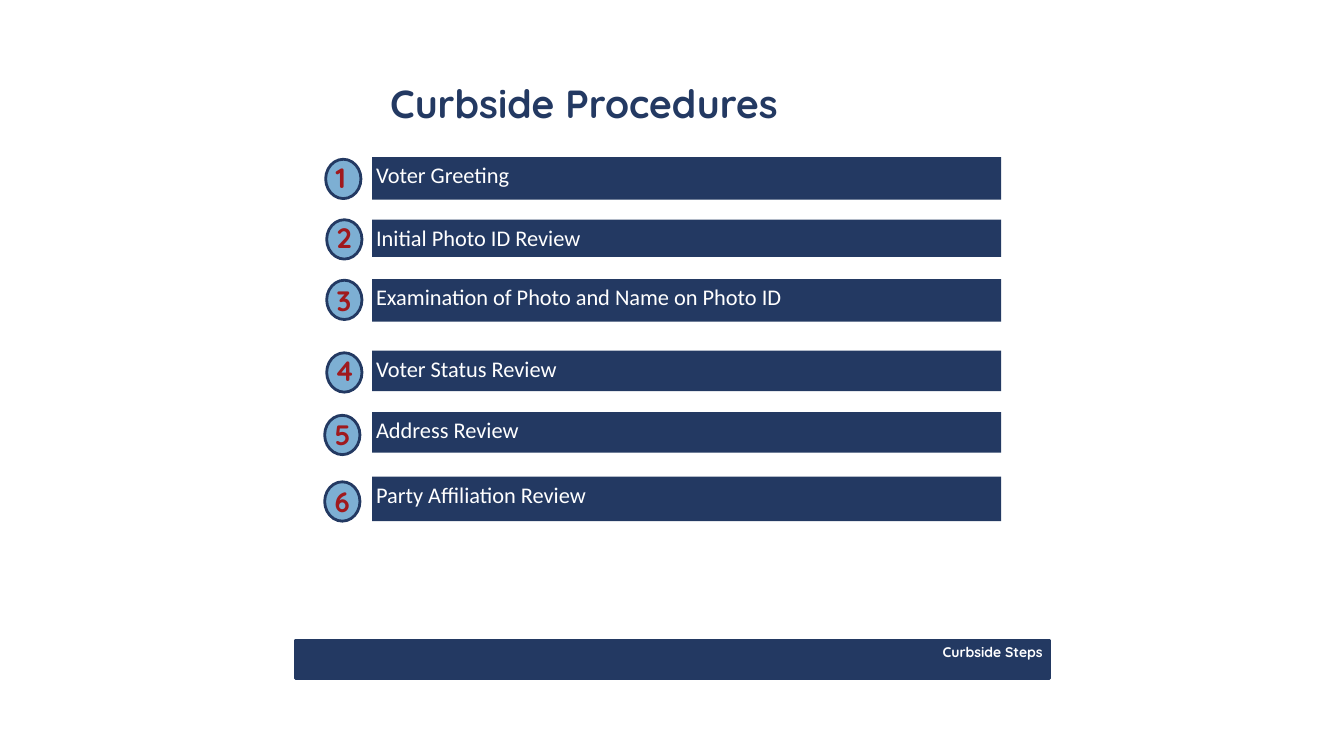
from pptx import Presentation
from pptx.dml.color import RGBColor
from pptx.enum.shapes import MSO_SHAPE
from pptx.enum.text import MSO_ANCHOR, PP_ALIGN
from pptx.util import Emu, Pt

RECTANGLE = MSO_SHAPE.RECTANGLE
DISC = MSO_SHAPE.FLOWCHART_CONNECTOR
TOP = MSO_ANCHOR.TOP
LEFT, RIGHT = PP_ALIGN.LEFT, PP_ALIGN.RIGHT

PX = 9144  # 100 px to the inch
INSET = 4

THEME = {
    "navy": RGBColor(0x23, 0x39, 0x62),
    "sky": RGBColor(0x7D, 0xAF, 0xD3),
    "red": RGBColor(0xA0, 0x19, 0x1D),
    "white": RGBColor(0xFF, 0xFF, 0xFF),
    "heading": "Quicksand",
    "body": "Calibri",
    "title_size": 28,
    "number_size": 20,
    "step_size": 16,
    "footer_size": 10,
    "outline": 2,
}


def add_panel(shapes, kind, bounds, fill, outlined=True):
    panel = shapes.add_shape(kind, *[Emu(n * PX) for n in bounds])
    panel.shadow.inherit = False
    panel.fill.solid()
    panel.fill.fore_color.rgb = THEME[fill]
    if outlined:
        panel.line.color.rgb = THEME["navy"]
        panel.line.width = Pt(THEME["outline"])
    else:
        panel.line.fill.background()
    return panel


def write(box, text, size, colour, font="heading", bold=True, align=LEFT):
    frame = box.text_frame
    frame.word_wrap = True
    frame.vertical_anchor = TOP
    frame.margin_left = frame.margin_right = Emu(INSET * PX)
    frame.margin_top = frame.margin_bottom = Emu(INSET * PX)
    para = frame.paragraphs[0]
    para.alignment = align
    span = para.add_run()
    span.text = text
    span.font.name = THEME[font]
    span.font.size = Pt(THEME[size])
    span.font.bold = bold
    span.font.color.rgb = THEME[colour]


deck = Presentation()
deck.slide_width = Emu(1333 * PX)
deck.slide_height = Emu(750 * PX)
page = deck.slides.add_slide(deck.slide_layouts[6])

# Footer band
add_panel(page.shapes, RECTANGLE, (293, 635, 748, 38), "navy")
footer = page.shapes.add_textbox(*[Emu(n * PX) for n in (421, 634, 617, 39)])
write(footer, "Curbside Steps", "footer_size", "white", align=RIGHT)

# Title
title = page.shapes.add_textbox(*[Emu(n * PX) for n in (383, 75, 621, 50)])
write(title, "Curbside Procedures", "title_size", "navy")

# Steps: label, bar top and height, disc left and top, number left and top
steps = [
    ("Voter Greeting", 156, 42, 323, 158, 329, 155),
    ("Initial Photo ID Review", 218, 37, 324, 218, 330, 215),
    ("Examination of Photo and Name on Photo ID", 277, 42, 324, 278, 330, 277),
    ("Voter Status Review", 348, 40, 324, 350, 328, 347),
    ("Address Review", 409, 40, 322, 412, 328, 410),
    ("Party Affiliation Review", 473, 44, 322, 478, 328, 477),
]
for number, step in enumerate(steps, 1):
    label, bar_top, bar_height, disc_left, disc_top, number_left, number_top = step
    bar = add_panel(page.shapes, RECTANGLE, (369, bar_top, 624, bar_height), "navy", outlined=False)
    write(bar, label, "step_size", "white", font="body", bold=False)

    badge = page.shapes.add_group_shape()
    add_panel(badge.shapes, DISC, (disc_left, disc_top, 35, 39), "sky")
    numeral = badge.shapes.add_textbox(*[Emu(n * PX) for n in (number_left, number_top, 24, 39)])
    write(numeral, str(number), "number_size", "red")

deck.save("out.pptx")
